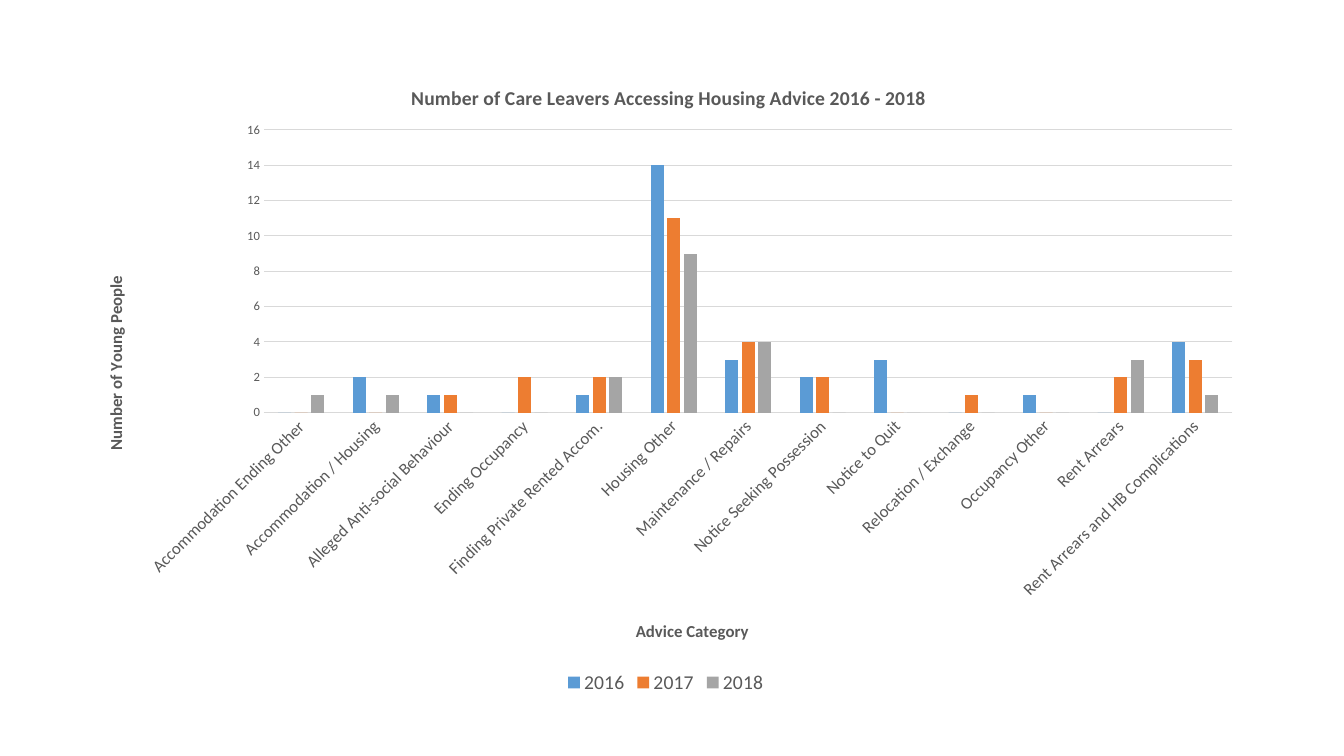
from pptx import Presentation
from pptx.chart.data import CategoryChartData
from pptx.dml.color import RGBColor
from pptx.enum.chart import XL_CHART_TYPE, XL_LEGEND_POSITION, XL_TICK_MARK
from pptx.oxml import parse_xml
from pptx.oxml.ns import nsdecls, qn
from pptx.util import Pt

CLUSTERED = XL_CHART_TYPE.COLUMN_CLUSTERED
LEGEND_BOTTOM = XL_LEGEND_POSITION.BOTTOM
NO_TICK = XL_TICK_MARK.NONE
BLANK_LAYOUT = 6
FONT = "Calibri"
COLORS = {"text": "595959", "line": "D9D9D9",
          "2016": "5B9BD5", "2017": "ED7D31", "2018": "A5A5A5"}

# Advice category: young people in 2016, 2017 and 2018
ADVICE = {
    "Accommodation Ending Other": (0, 0, 1),
    "Accommodation / Housing": (2, 0, 1),
    "Alleged Anti-social Behaviour": (1, 1, 0),
    "Ending Occupancy": (0, 2, 0),
    "Finding Private Rented Accom.": (1, 2, 2),
    "Housing Other": (14, 11, 9),
    "Maintenance / Repairs": (3, 4, 4),
    "Notice Seeking Possession": (2, 2, 0),
    "Notice to Quit": (3, 0, 0),
    "Relocation / Exchange": (0, 1, 0),
    "Occupancy Other": (1, 0, 0),
    "Rent Arrears": (0, 2, 3),
    "Rent Arrears and HB Complications": (4, 3, 1),
}


def place(element, index, x, y, size=None):
    """Set a manual layout, in fractions of the chart area."""
    for old in element.findall(qn("c:layout")):
        element.remove(old)
    parts = {"xMode": "edge", "yMode": "edge", "x": x, "y": y}
    if size:
        parts = {"layoutTarget": "inner", **parts, "w": size[0], "h": size[1]}
    inner = "".join(f'<c:{tag} val="{value}"/>' for tag, value in parts.items())
    element.insert(index, parse_xml(
        f'<c:layout {nsdecls("c")}><c:manualLayout>{inner}</c:manualLayout></c:layout>'))


def write_title(title, text, size, x, y, rotation=0):
    para = title.text_frame.paragraphs[0]
    span = para.add_run()
    span.text = text
    span.font.name, span.font.size, span.font.bold = FONT, Pt(size), True
    span.font.color.rgb = RGBColor.from_string(COLORS["text"])
    element = title._element
    body = element.find(".//" + qn("a:bodyPr"))
    body.set("rot", str(rotation * 60000))
    body.set("vert", "horz")
    place(element, 1, x, y)


deck = Presentation()
deck.slide_width, deck.slide_height = Pt(960), Pt(540)
page = deck.slides.add_slide(deck.slide_layouts[BLANK_LAYOUT])

# Chart data
data = CategoryChartData()
data.categories = list(ADVICE)
for year, values in zip(("2016", "2017", "2018"), zip(*ADVICE.values())):
    data.add_series(year, values)
chart = page.shapes.add_chart(CLUSTERED, Pt(54.7), Pt(41), Pt(841.7), Pt(458), data).chart
chart.font.name, chart.font.size = FONT, Pt(10)

# Columns
plot = chart.plots[0]
plot.gap_width, plot.overlap, plot.vary_by_categories = 219, -27, False
for series in plot.series:
    series.format.fill.solid()
    series.format.fill.fore_color.rgb = RGBColor.from_string(COLORS[series.name])
    series.invert_if_negative = False
place(chart._chartSpace.find(".//" + qn("c:plotArea")), 0, 0.159, 0.113, (0.822, 0.441))

# Axes
advice_axis, people_axis = chart.category_axis, chart.value_axis
people_axis.minimum_scale, people_axis.maximum_scale, people_axis.major_unit = 0, 16, 2
people_axis.has_major_gridlines = True
people_axis.format.line.fill.background()
for axis in (advice_axis, people_axis):
    axis.major_tick_mark = axis.minor_tick_mark = NO_TICK
for line in (advice_axis.format.line, people_axis.major_gridlines.format.line):
    line.color.rgb = RGBColor.from_string(COLORS["line"])
    line.width = Pt(0.75)

# Legend
chart.has_legend = True
chart.legend.position = LEGEND_BOTTOM
chart.legend.include_in_layout = False

# Label and legend text
for font, size in ((advice_axis.tick_labels.font, 12),
                   (people_axis.tick_labels.font, 9), (chart.legend.font, 14)):
    font.name, font.size = FONT, Pt(size)
    font.color.rgb = RGBColor.from_string(COLORS["text"])
label_body = advice_axis._element.find(qn("c:txPr")).find(qn("a:bodyPr"))
label_body.set("rot", str(-45 * 60000))
label_body.set("vert", "horz")

# Titles
chart.has_title = True
write_title(chart.chart_title, "Number of Care Leavers Accessing Housing Advice 2016 - 2018",
            14, 0.281, 0.037)
write_title(advice_axis.axis_title, "Advice Category", 12, 0.472, 0.873)
write_title(people_axis.axis_title, "Number of Young People", 12, 0.021, 0.336, rotation=-90)

deck.save("out.pptx")
